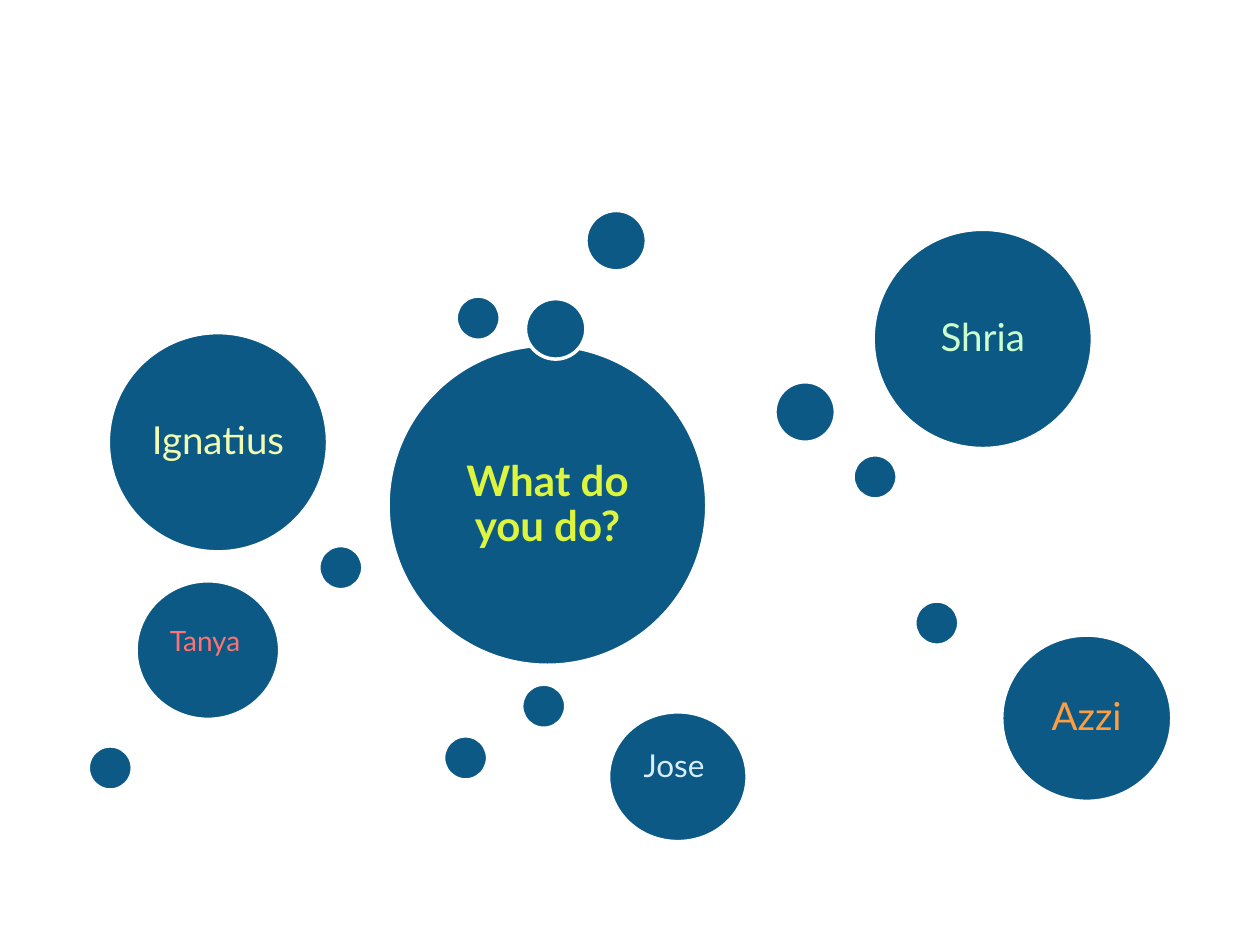
"""Builds a bubble diagram of people around a central question."""
from pptx import Presentation, util as u
from pptx.dml.color import RGBColor
from pptx.enum import shapes, text

COLUMNS, ROWS = 100, 75
INSCRIBED = 0.707


def colour(hex_value):
    """Return the colour for a hex string."""
    return RGBColor.from_string(hex_value)


def write(frame, words, size, ink, bold=False, align=None, line=None, after=None):
    """Put formatted words into a text frame."""
    paragraph = frame.paragraphs[0]
    paragraph.alignment = align
    paragraph.line_spacing = line
    paragraph.space_after = None if after is None else u.Pt(after)
    run = paragraph.add_run()
    run.text = words
    run.font.name = "Lato"
    run.font.size = u.Pt(size)
    run.font.bold = bold
    run.font.color.rgb = colour(ink)


class BubbleSlide:
    """Holds the bubble style and the slide, measured in grid columns and rows."""

    fill, outline, outline_width = "0C5986", "FFFFFF", 2

    def __init__(self, deck):
        """Add an empty slide and work out its grid."""
        self.slide = deck.slides.add_slide(deck.slide_layouts[6])
        self.column = deck.slide_width / COLUMNS
        self.row = deck.slide_height / ROWS

    def place(self, left, top, width, height):
        """Turn grid units into slide lengths."""
        return [round(n * unit) for n, unit in
                zip((left, top, width, height), (self.column, self.row) * 2)]

    def bubble(self, left, top, width, height=None):
        """Draw an outlined bubble, round unless a height is given."""
        oval = self.slide.shapes.add_shape(
            shapes.MSO_SHAPE.OVAL, *self.place(left, top, width, height or width))
        oval.shadow.inherit = False
        oval.fill.solid()
        oval.fill.fore_color.rgb = colour(self.fill)
        oval.line.color.rgb = colour(self.outline)
        oval.line.width = u.Pt(self.outline_width)

    def caption(self, box, words, **style):
        """Add a free caption that grows with its text."""
        frame = self.slide.shapes.add_textbox(*self.place(*box)).text_frame
        frame.word_wrap = True
        frame.auto_size = text.MSO_AUTO_SIZE.SHAPE_TO_FIT_TEXT
        write(frame, words, **style)

    def named_bubble(self, box, words, inset=0.09, **style):
        """Draw a bubble with a label in its inscribed rectangle."""
        self.bubble(*box)
        left, top, width, height = box
        margin = (1 - INSCRIBED) / 2
        label = self.slide.shapes.add_textbox(*self.place(
            left + width * margin, top + height * margin,
            width * INSCRIBED, height * INSCRIBED))
        frame = label.text_frame
        frame.word_wrap = True
        frame.vertical_anchor = text.MSO_ANCHOR.MIDDLE
        frame.margin_left = frame.margin_right = u.Inches(inset)
        frame.margin_top = frame.margin_bottom = u.Inches(inset)
        write(frame, words, align=text.PP_ALIGN.CENTER, line=0.9,
              after=0.35 * style["size"], **style)


def main():
    """Build and save the slide."""
    deck = Presentation()
    deck.slide_width, deck.slide_height = u.Inches(10), u.Inches(7.5)
    diagram = BubbleSlide(deck)

    diagram.named_bubble((30.8, 27.4, 25.3, 25.4), "What do you do?",
                         inset=0.1, size=24, ink="DDF53D", bold=True)
    people = [
        ((8.6, 26.4, 17.4, 17.4), "Ignatius", "F1FBB1"),
        ((69.3, 18.2, 17.4, 17.4), "Shria", "CCFFCC"),
        ((79.5, 50.4, 13.5, 13.2), "Azzi", "FF9E40"),
    ]
    for box, person, ink in people:
        diagram.named_bubble(box, person, size=22, ink=ink)

    medium_dots = [(46.5, 16.7), (41.7, 23.7), (61.5, 30.3)]
    small_dots = [(35.2, 58.4), (67.7, 36.1), (36.2, 23.5), (25.3, 43.3),
                  (7, 59.2), (41.4, 54.3), (72.6, 47.7)]
    for diameter, dots in ((4.8, medium_dots), (3.5, small_dots)):
        for left, top in dots:
            diagram.bubble(left, top, diameter)

    diagram.bubble(10.8, 46.1, 11.4, 11)
    diagram.caption((12.5, 49, 8, 3.7), "Tanya", size=16, ink="FF7172")
    diagram.bubble(48.3, 56.5, 11, 10.3)
    diagram.caption((48.4, 58.7, 10.2, 4), "Jose", size=18, ink="D7EEFB",
                    align=text.PP_ALIGN.CENTER)

    deck.save("out.pptx")


if __name__ == "__main__":
    main()
